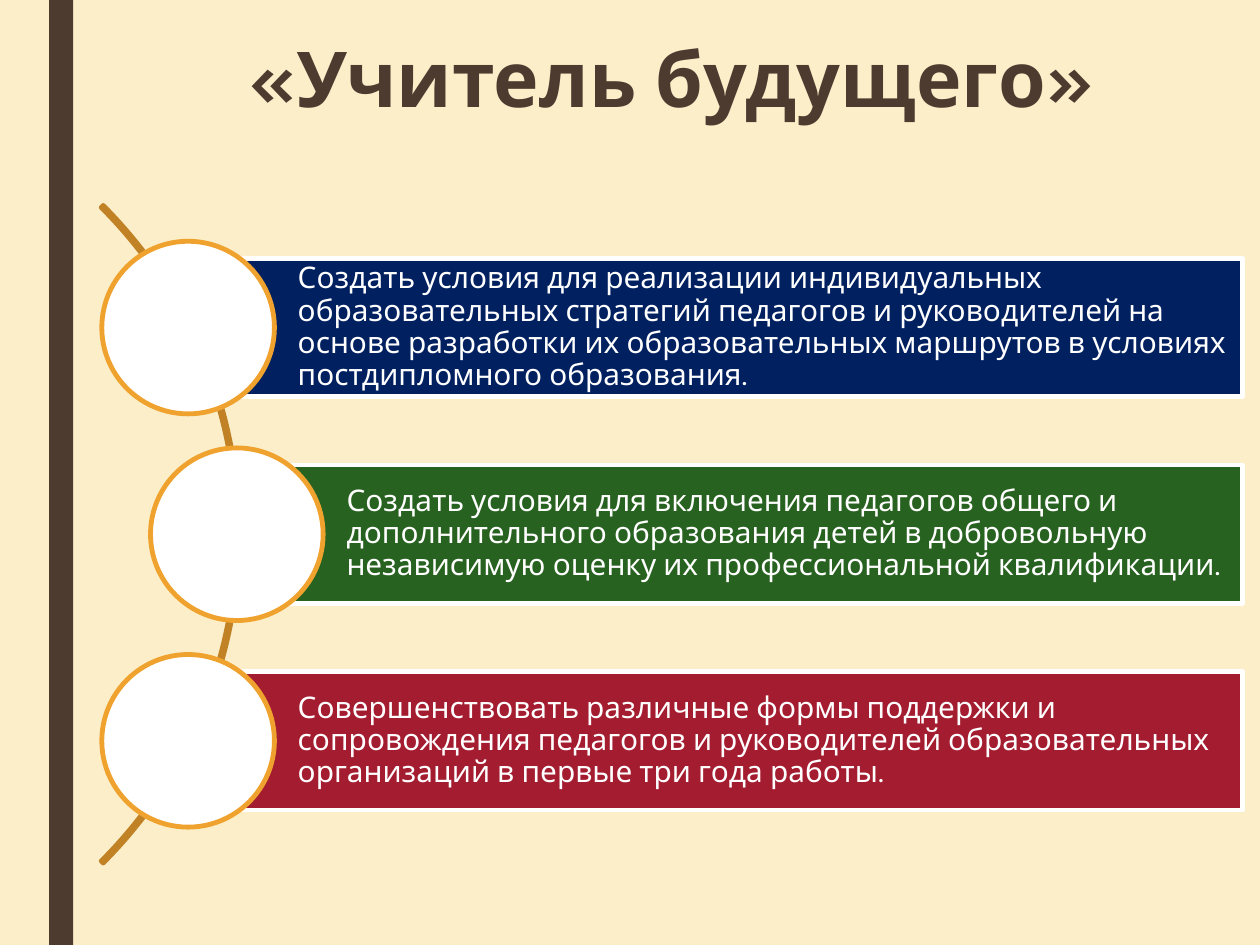
import math
from dataclasses import dataclass

from pptx import Presentation
from pptx import util as u
from pptx.dml.color import RGBColor
from pptx.enum import shapes, text

WIDTH, HEIGHT = 10, 7.5
ARC_X, ARC_Y, ARC_RADIUS = -1.79, 4.24, 3.69
ROW_PITCH = 1.64
BAR_HEIGHT, BAR_RIGHT = 1.1, 9.86
CIRCLE_SIZE = 1.37


@dataclass(frozen=True)
class Theme:
    font: str = "Karla"
    title_size: float = 44
    goal_size: float = 17
    outline: float = 2.75
    background: str = "FBEEC9"
    brown: str = "4E3B30"
    arc: str = "C08225"
    ring: str = "F0A22E"
    white: str = "FFFFFF"


THEME = Theme()

GOALS = [
    ("002060", "Создать условия для реализации индивидуальных образовательных "
               "стратегий педагогов и руководителей на основе разработки их "
               "образовательных маршрутов в условиях постдипломного образования."),
    ("286220", "Создать условия для включения педагогов общего и дополнительного "
               "образования детей в добровольную независимую оценку их "
               "профессиональной квалификации."),
    ("A41C2F", "Совершенствовать различные формы поддержки и сопровождения "
               "педагогов и руководителей образовательных организаций в первые "
               "три года работы."),
]


def color(code):
    return RGBColor.from_string(code)


def add_figure(slide, kind, box, fill=None, line=None):
    figure = slide.shapes.add_shape(kind, *map(u.Inches, box))
    figure.shadow.inherit = False
    if fill:
        figure.fill.solid()
        figure.fill.fore_color.rgb = color(fill)
    else:
        figure.fill.background()
    if line:
        figure.line.color.rgb = color(line)
        figure.line.width = u.Pt(THEME.outline)
    else:
        figure.line.fill.background()
    return figure


def write(frame, content, size, ink, align, spacing, bold=False):
    frame.word_wrap = True
    frame.auto_size = text.MSO_AUTO_SIZE.NONE
    frame.text = content
    paragraph = frame.paragraphs[0]
    paragraph.alignment = align
    paragraph.line_spacing = spacing
    paragraph.font.name = THEME.font
    paragraph.font.size = u.Pt(size)
    paragraph.font.bold = bold
    paragraph.font.color.rgb = color(ink)


def set_title(slide, content):
    title = slide.shapes.title
    title.left, title.top, title.width, title.height = map(
        u.Inches, (1.39, 0.33, 7.88, 1.62))
    write(title.text_frame, content, THEME.title_size, THEME.brown,
          text.PP_ALIGN.CENTER, 0.89, bold=True)
    title.text_frame.vertical_anchor = text.MSO_ANCHOR.TOP
    title.text_frame.margin_top = 0


def add_arc(slide):
    diameter = 2 * ARC_RADIUS
    arc = add_figure(slide, shapes.MSO_SHAPE.BLOCK_ARC,
                     (ARC_X - ARC_RADIUS, ARC_Y - ARC_RADIUS, diameter, diameter),
                     line=THEME.arc)
    for index, value in enumerate((189, 27, 0.003)):
        arc.adjustments[index] = value


def add_goal(slide, offset, fill, content):
    center_x = ARC_X + math.sqrt((ARC_RADIUS - 0.02) ** 2 - offset ** 2)
    center_y = ARC_Y + offset
    bar = add_figure(slide, shapes.MSO_SHAPE.RECTANGLE,
                     (center_x, center_y - BAR_HEIGHT / 2,
                      BAR_RIGHT - center_x, BAR_HEIGHT), fill, THEME.white)
    frame = bar.text_frame
    write(frame, content, THEME.goal_size, THEME.white, text.PP_ALIGN.LEFT, 0.9)
    frame.vertical_anchor = text.MSO_ANCHOR.MIDDLE
    frame.margin_left = u.Inches(0.87)
    frame.margin_right = frame.margin_top = frame.margin_bottom = u.Inches(0.05)
    add_figure(slide, shapes.MSO_SHAPE.OVAL,
               (center_x - CIRCLE_SIZE / 2, center_y - CIRCLE_SIZE / 2,
                CIRCLE_SIZE, CIRCLE_SIZE), THEME.white, THEME.ring)


def main():
    deck = Presentation()
    deck.slide_width, deck.slide_height = u.Inches(WIDTH), u.Inches(HEIGHT)
    slide = deck.slides.add_slide(deck.slide_layouts.get_by_name("Title Only"))
    slide.background.fill.solid()
    slide.background.fill.fore_color.rgb = color(THEME.background)
    add_figure(slide, shapes.MSO_SHAPE.RECTANGLE, (0.39, 0, 0.19, HEIGHT), THEME.brown)
    set_title(slide, "«Учитель будущего»")
    add_arc(slide)
    for row, (fill, content) in enumerate(GOALS):
        add_goal(slide, (row - 1) * ROW_PITCH, fill, content)
    deck.save("out.pptx")


if __name__ == "__main__":
    main()
